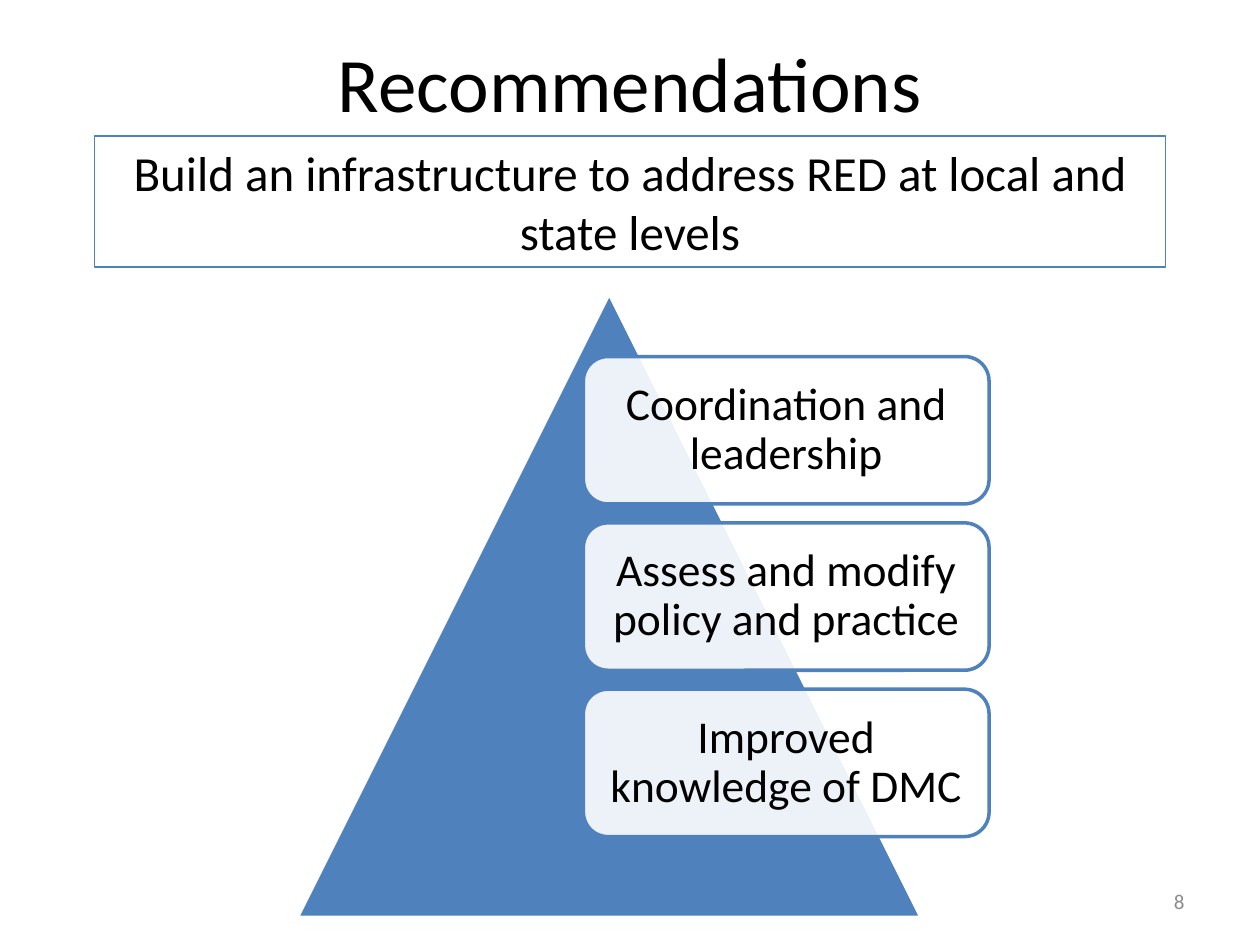
import dataclasses

import pptx
import pptx.dml.color
import pptx.enum.shapes
import pptx.enum.text
import pptx.oxml.ns
import pptx.util
from lxml import etree

Inches = pptx.util.Inches
Pt = pptx.util.Pt
Kind = pptx.enum.shapes.MSO_SHAPE
Align = pptx.enum.text.PP_ALIGN
Anchor = pptx.enum.text.MSO_ANCHOR


@dataclasses.dataclass(frozen=True)
class Theme:
    font: str = "Calibri"
    ink: str = "000000"
    gray: str = "8C8C8C"
    blue: str = "4F81BD"
    white: str = "FFFFFF"
    title: int = 44
    lead: int = 28
    card: int = 26
    page: int = 12


@dataclasses.dataclass(frozen=True)
class Box:
    left: float
    top: float
    width: float
    height: float

    def emu(self) -> list:
        return [Inches(n) for n in dataclasses.astuple(self)]


THEME = Theme()
CARDS = (
    "Coordination and leadership",
    "Assess and modify policy and practice",
    "Improved knowledge of DMC",
)
FIRST = Box(4.63, 2.83, 3.22, 1.17)
STEP = 1.32


def rgb(code: str):
    return pptx.dml.color.RGBColor.from_string(code)


def assign(item, values: dict) -> None:
    for name, value in values.items():
        setattr(item, name, value)


def write(shape, text: str, size: int, color: str = THEME.ink,
          align=Align.CENTER, frame: dict = {}, para: dict = {}) -> None:
    assign(shape.text_frame, {"word_wrap": True,
                              "vertical_anchor": Anchor.MIDDLE, **frame})
    line = shape.text_frame.paragraphs[0]
    assign(line, {"alignment": align, **para})
    run = line.add_run()
    run.text = text
    assign(run.font, {"name": THEME.font, "size": Pt(size)})
    run.font.color.rgb = rgb(color)


def label(slide, box: Box, text: str, size: int, **style) -> None:
    write(slide.shapes.add_textbox(*box.emu()), text, size, **style)


def draw(slide, kind, box: Box, fill: str | None, edge: str, width: float):
    shape = slide.shapes.add_shape(kind, *box.emu())
    shape.shadow.inherit = False
    if fill:
        shape.fill.solid()
        shape.fill.fore_color.rgb = rgb(fill)
    else:
        shape.fill.background()
    shape.line.color.rgb = rgb(edge)
    shape.line.width = Pt(width)
    return shape


def fade(shape, percent: int) -> None:
    """Set the opacity of a solid fill."""
    qn = pptx.oxml.ns.qn
    color = shape.element.spPr.find(qn("a:solidFill")).find(qn("a:srgbClr"))
    etree.SubElement(color, qn("a:alpha"), val=str(percent * 1000))


def card(slide, box: Box, text: str) -> None:
    shape = draw(slide, Kind.ROUNDED_RECTANGLE, box, THEME.white, THEME.blue, 2)
    fade(shape, 90)
    sides = ("left", "top", "right", "bottom")
    write(shape, text, THEME.card,
          frame={f"margin_{side}": Inches(0.11) for side in sides},
          para={"line_spacing": 0.9})


def main() -> None:
    deck = pptx.Presentation()
    assign(deck, {"slide_width": Inches(10), "slide_height": Inches(7.5)})
    slide = deck.slides.add_slide(deck.slide_layouts[6])

    label(slide, Box(0.5, 0.02, 9, 1.25), "Recommendations", THEME.title)
    draw(slide, Kind.ISOSCELES_TRIANGLE, Box(2.36, 2.33, 4.95, 4.95),
         THEME.blue, THEME.white, 2)
    for row, text in enumerate(CARDS):
        box = dataclasses.replace(FIRST, top=FIRST.top + row * STEP)
        card(slide, box, text)

    lead = draw(slide, Kind.RECTANGLE, Box(0.75, 1.08, 8.5, 1.04),
                None, THEME.blue, 0.75)
    write(lead, "Build an infrastructure to address RED at local and state levels",
          THEME.lead, frame={"vertical_anchor": Anchor.TOP})
    label(slide, Box(7.17, 6.95, 2.33, 0.4), "8", THEME.page,
          color=THEME.gray, align=Align.RIGHT)
    deck.save("out.pptx")


if __name__ == "__main__":
    main()
